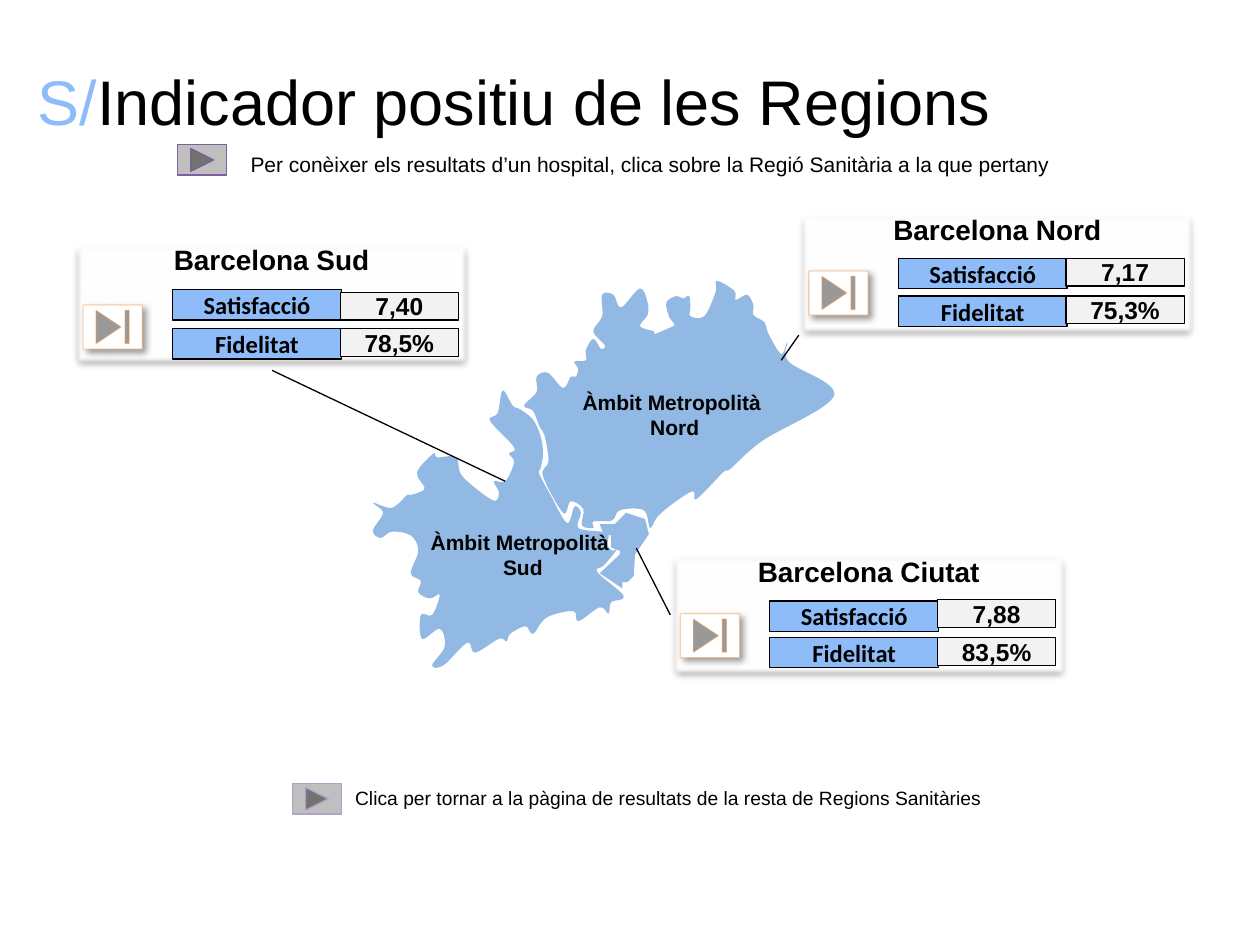
"""Build the slide with the region map and its three result cards."""
from lxml import etree
from pptx import Presentation
from pptx.dml.color import RGBColor as RGB
from pptx.enum.shapes import MSO_CONNECTOR as LINK, MSO_SHAPE as KIND
from pptx.enum.text import MSO_ANCHOR as ANCHOR, PP_ALIGN as ALIGN
from pptx.oxml.ns import qn
from pptx.util import Pt

PX = 9144
HUE = {"sky": "8EBCF9", "map": "91B9E3", "ink": "000000", "white": "FFFFFF",
       "pale": "F2F2F2", "gray": "BFBFBF", "plum": "7C5F9F", "lilac": "B2A1C7",
       "orange": "F79646"}
NORTH = [
    (516, 419), (511, 405), (492, 405), (486, 413), (471, 414), (471, 419), (462, 417), (463, 404),
    (453, 398), (447, 407), (431, 378), (435, 368), (435, 360), (432, 345), (428, 338), (423, 326),
    (416, 322), (426, 311), (426, 299), (435, 296), (447, 308), (453, 299), (457, 299), (459, 293),
    (456, 287), (465, 286), (465, 278), (471, 269), (477, 277), (480, 274), (471, 263), (478, 251),
    (478, 234), (487, 234), (493, 244), (508, 229), (514, 240), (514, 250), (508, 259), (519, 263),
    (520, 265), (534, 259), (535, 257), (531, 251), (529, 240), (537, 235), (542, 237), (547, 235),
    (548, 244), (548, 251), (559, 251), (568, 232), (569, 223), (583, 231), (584, 238), (593, 234),
    (598, 242), (598, 250), (607, 256), (610, 265), (620, 281), (625, 272), (626, 287), (662, 314),
    (605, 350), (580, 372), (574, 375), (553, 396), (550, 390), (535, 399), (522, 410)]
SOUTH = [
    (302, 427), (296, 421), (304, 407), (296, 399), (311, 403), (323, 393), (325, 393), (332, 391),
    (337, 387), (331, 375), (344, 360), (347, 363), (362, 363), (367, 378), (391, 397), (396, 391),
    (392, 382), (401, 382), (408, 367), (404, 360), (408, 355), (389, 334), (395, 328), (399, 310),
    (407, 322), (413, 325), (423, 333), (429, 346), (431, 360), (429, 372), (428, 376), (437, 393),
    (450, 415), (456, 402), (461, 407), (459, 419), (477, 422), (483, 424), (482, 433), (486, 437),
    (489, 437), (479, 449), (474, 454), (495, 473), (485, 478), (483, 487), (476, 482), (459, 493),
    (455, 485), (434, 490), (423, 503), (417, 497), (405, 503), (402, 509), (396, 507), (377, 518),
    (371, 510), (352, 528), (343, 528), (353, 513), (349, 499), (335, 507), (334, 488), (343, 488),
    (349, 472), (341, 475), (332, 470), (334, 461), (326, 455), (332, 437), (326, 425), (311, 422)]
CITY = [
    (479, 424), (476, 416), (488, 416), (497, 407), (503, 409), (512, 412), (515, 424), (504, 440),
    (503, 457), (498, 462), (494, 462), (494, 467), (476, 455), (492, 440), (492, 437), (488, 436),
    (485, 434), (485, 425)]


def tint(name):
    """Return the named colour."""
    return RGB.from_string(HUE[name])


def add(node, tag, **attrs):
    """Append a drawing element and return it."""
    return etree.SubElement(node, qn(tag), attrs)


def shade(shape, alpha, blur, dist, turn):
    """Give a shape an outer shadow and return its effect list."""
    effects = shape._element.spPr.find(qn("a:effectLst"))
    outer = add(effects, "a:outerShdw", blurRad=str(Pt(blur)), dist=str(Pt(dist)),
                dir=str(turn * 60000), algn="ctr", rotWithShape="0")
    add(add(outer, "a:srgbClr", val=HUE["ink"]), "a:alpha", val=str(alpha * 1000))
    return effects


def write(para, text, size, hue="ink", face="Arial", bold=False):
    """Add one run to a paragraph."""
    run = para.add_run()
    run.text = text
    font = run.font
    font.size, font.name, font.bold = Pt(size), face, bold
    font.color.rgb = tint(hue)


def label(slide, box, lines, size, bold=False, align=ALIGN.CENTER, inset=True):
    """Add a text box with one paragraph per line."""
    frame = slide.shapes.add_textbox(*[n * PX for n in box]).text_frame
    frame.word_wrap = True
    if not inset:
        frame.margin_left = frame.margin_right = frame.margin_top = frame.margin_bottom = 0
    for i, text in enumerate(lines):
        para = frame.add_paragraph() if i else frame.paragraphs[0]
        para.alignment = align
        write(para, text, size, bold=bold)


def title(slide):
    """Add the two-colour title."""
    box = slide.shapes.add_textbox(20 * PX, 23 * PX, 961 * PX, 114 * PX)
    frame = box.text_frame
    frame.word_wrap, frame.vertical_anchor = True, ANCHOR.MIDDLE
    write(frame.paragraphs[0], "S/", 36, "sky")
    write(frame.paragraphs[0], "Indicador positiu de les Regions", 36)


def paint(shape, fill, line=None):
    """Set the fill and outline of a shape without a shadow."""
    shape.shadow.inherit = False
    shape.fill.solid()
    shape.fill.fore_color.rgb = tint(fill)
    if line:
        shape.line.color.rgb, shape.line.width = tint(line), Pt(0.75)
    else:
        shape.line.fill.background()
    return shape


def block(slide, kind, box, fill, line=None):
    """Add a painted preset shape."""
    return paint(slide.shapes.add_shape(kind, *[n * PX for n in box]), fill, line)


def cell(slide, box, fill, text, face="Arial"):
    """Add a bordered rectangle with bold centred text."""
    frame = block(slide, KIND.RECTANGLE, box, fill, "ink").text_frame
    frame.vertical_anchor, frame.word_wrap = ANCHOR.MIDDLE, True
    para = frame.paragraphs[0]
    para.alignment = ALIGN.CENTER
    write(para, text, 14, face=face, bold=True)


def bend(shape):
    """Turn the straight sides of a closed outline into smooth curves."""
    sides = list(shape._element.iter(qn("a:lnTo")))
    dots = [(int(s[0].get("x")), int(s[0].get("y"))) for s in sides]
    size = len(dots)
    for i, side in enumerate(sides):
        a, b, c, d = (dots[(i + k) % size] for k in (-2, -1, 0, 1))
        one = [q + (r - p) // 6 for p, q, r in zip(a, b, c)]
        two = [q - (r - p) // 6 for p, q, r in zip(b, c, d)]
        side.tag = qn("a:cubicBezTo")
        side.remove(side[0])
        for x, y in (one, two, c):
            add(side, "a:pt", x=str(x), y=str(y))


def region(slide, dots, smooth=True):
    """Add one closed map region."""
    form = slide.shapes.build_freeform(*[n * PX for n in dots[0]], scale=1.0)
    form.add_line_segments([(x * PX, y * PX) for x, y in dots[1:] + dots[:1]], close=True)
    shape = paint(form.convert_to_shape(), "map")
    if smooth:
        bend(shape)


def card(slide, x, y, name, values, rows, key):
    """Add a result card and return its panel."""
    panel = block(slide, KIND.RECTANGLE, (x, y, 315, 98), "white")
    add(shade(panel, 32, 3.5, 2.2, 90), "a:softEdge", rad=str(Pt(2.5)))
    label(slide, (x, y - 4, 315, 37), [name], 16, True)
    for head, value, (left, right) in zip(("Satisfacció", "Fidelitat"), values, rows):
        cell(slide, (x + 79, left, 134, 24), "sky", head, "Calibri")
        cell(slide, (x + 212, right, 94, 22), "pale", value)
    knob = block(slide, KIND.ACTION_BUTTON_END, (x + 8, key, 47, 35), "white", "orange")
    ink = knob.line._ln.find(".//" + qn("a:srgbClr"))
    add(ink, "a:alpha", val="39000")
    shade(knob, 40, 4, 3, 45)
    return panel


def link(slide, *ends):
    """Add a thin black line between two points."""
    line = slide.shapes.add_connector(LINK.STRAIGHT, *[n * PX for n in ends])
    line.line.color.rgb, line.line.width = tint("ink"), Pt(0.75)
    add(line._element.spPr, "a:effectLst")
    return line


def hint(slide, key, line, box, text, size):
    """Add a forward button with its explanation."""
    block(slide, KIND.ACTION_BUTTON_FORWARD_OR_NEXT, (*key, 39, 24), "gray", line)
    label(slide, box, [text], size, align=ALIGN.LEFT)


def main():
    """Build and save the slide."""
    deck = Presentation()
    deck.slide_width, deck.slide_height = 1000 * PX, 750 * PX
    slide = deck.slides.add_slide(deck.slide_layouts[6])
    title(slide)
    hint(slide, (141, 115), "plum", (189, 115, 693, 30),
         "Per conèixer els resultats d’un hospital, clica sobre la Regió Sanitària a la que pertany", 12)
    region(slide, NORTH)
    region(slide, SOUTH)
    region(slide, CITY, False)
    for box, name in (((460, 309, 151, 40), "Nord"), ((335, 420, 160, 40), "Sud")):
        label(slide, box, ["Àmbit Metropolità ", name], 12, True, inset=False)
    card(slide, 58, 192, "Barcelona Sud", ("7,40", "78,5%"), ((230, 232), (261, 261)), 242)
    card(slide, 634, 168, "Barcelona Nord", ("7,17", "75,3%"), ((205, 205), (235, 235)), 215)
    city = card(slide, 532, 439, "Barcelona Ciutat", ("7,88", "83,5%"),
                ((477, 476), (506, 506)), 487)
    link(slide, 216, 294, 401, 382)
    link(slide, 505, 435, 532, 488).end_connect(city, 1)
    link(slide, 634, 266, 620, 286)
    hint(slide, (232, 622), "lilac", (272, 619, 567, 29),
         "Clica per tornar a la pàgina de resultats de la resta de Regions Sanitàries", 11)
    deck.save("out.pptx")


if __name__ == "__main__":
    main()
